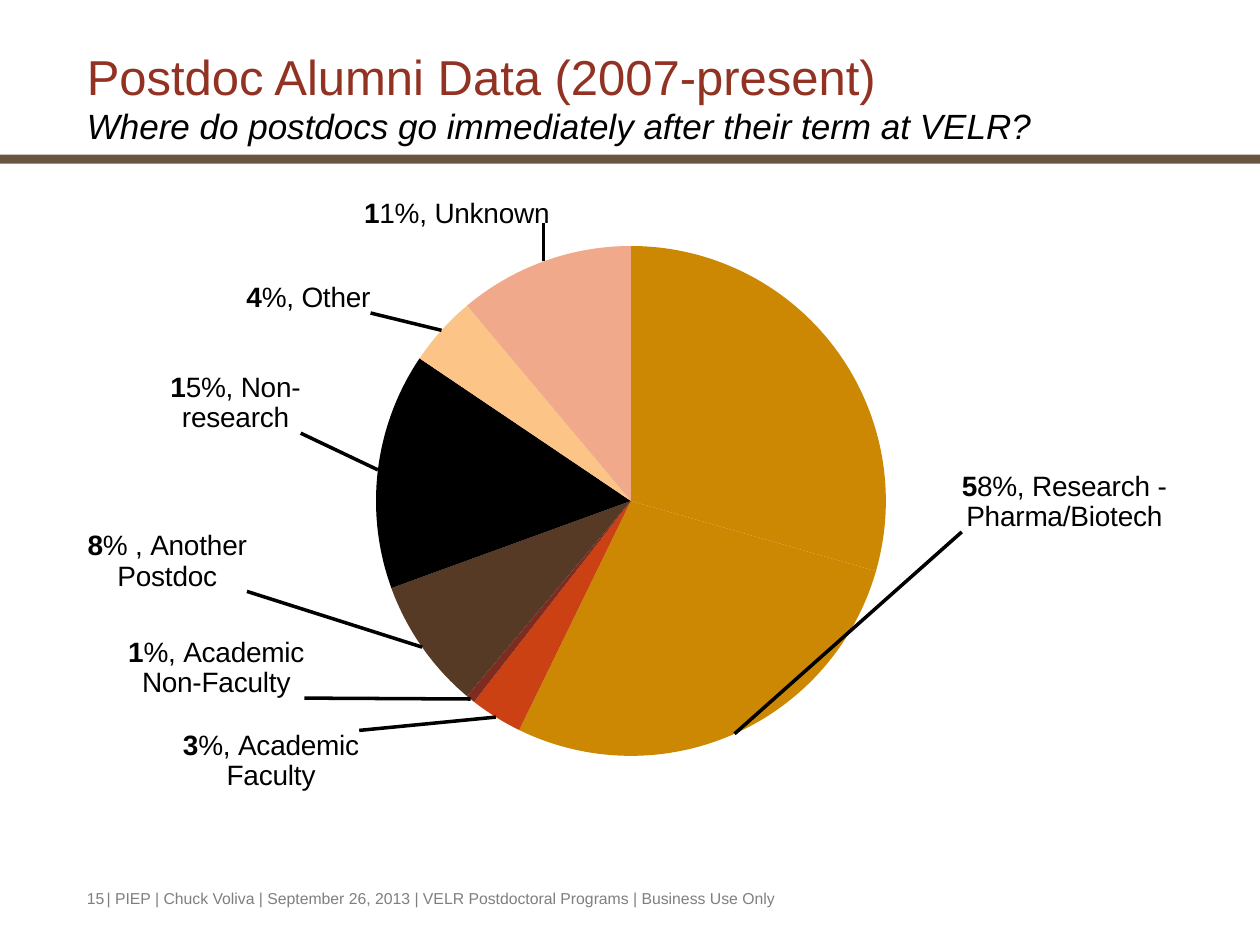
"""Build the postdoc alumni slide with a labelled pie chart."""
from math import cos, pi, sin

from lxml import etree
from pptx import Presentation
from pptx.chart.data import CategoryChartData
from pptx.dml.color import RGBColor
from pptx.enum import chart as charts, shapes, text
from pptx.oxml import parse_xml
from pptx.oxml.ns import nsdecls, qn
from pptx.util import Cm, Pt

FONT = "Arial"
TITLE = "Postdoc Alumni Data (2007-present)"
QUESTION = "Where do postdocs go immediately after their term at VELR?"
PAGE = "15"
FOOTER = "| PIEP | Chuck Voliva | September 26, 2013 | VELR Postdoctoral Programs | Business Use Only"
SLICES = [
    (53, "CC8803"), (50, "CC8803"), (6, "CB4113"), (1, "7F2C20"),
    (15, "563A25"), (27, "000000"), (8, "FCC587"), (20, "F0A98A"),
]
LABELS = [
    (1, "58%, Research - Pharma/Biotech", 19.33, 9.37),
    (2, "3%, Academic Faculty", 7.32, 14.6),
    (3, "1%, Academic Non-Faculty", 6.23, 12.74),
    (4, "8% , Another Postdoc", 5.1, 10.62),
    (5, "15%, Non-research", 6.21, 8.75),
    (6, "4%, Other", 7.58, 6.41),
    (7, "11%, Unknown", 11.13, 4.63),
]
CHART_LEFT, CHART_TOP, CHART_WIDTH, CHART_HEIGHT = 0.84, 4.01, 23.5, 12.7
CENTER_X, CENTER_Y, RADIUS = 12.72, 10.1, 5.14


def color(hex_code):
    return RGBColor.from_string(hex_code)


def style(run, size, hex_code, bold=False, italic=False):
    run.font.name, run.font.size = FONT, Pt(size)
    run.font.bold, run.font.italic = bold, italic
    run.font.color.rgb = color(hex_code)


def add_text(slide, left, top, width, height, content):
    frame = slide.shapes.add_textbox(Cm(left), Cm(top), Cm(width), Cm(height)).text_frame
    frame.word_wrap = True
    paragraph = frame.paragraphs[0]
    paragraph.text = content
    return frame, paragraph


def add_header(slide):
    bar = slide.shapes.add_shape(shapes.MSO_SHAPE.RECTANGLE, 0, Cm(3.12), Cm(25.4), Cm(0.18))
    bar.shadow.inherit = False
    bar.fill.solid()
    bar.fill.fore_color.rgb = color("6A5540")
    bar.line.fill.background()
    frame, heading = add_text(slide, 1.5, 1.69, 23.04, 1.4, f"{TITLE}\v{QUESTION}")
    frame.vertical_anchor = text.MSO_ANCHOR.BOTTOM
    heading.line_spacing = 0.95
    title, question = heading.runs
    style(title, 28, "923222")
    style(question, 20, "000000", italic=True)


def manual_layout(**settings):
    layout = etree.Element(qn("c:layout"))
    manual = etree.SubElement(layout, qn("c:manualLayout"))
    for tag, value in settings.items():
        etree.SubElement(manual, qn(f"c:{tag}")).set("val", str(value))
    return layout


def slice_edge(index):
    values = [value for value, _ in SLICES]
    angle = 2 * pi * (sum(values[:index]) + values[index] / 2) / sum(values)
    return CENTER_X + RADIUS * sin(angle), CENTER_Y - RADIUS * cos(angle)


def add_label(series, index, content, corner_x, corner_y):
    label = series.points[index].data_label
    paragraph = label.text_frame.paragraphs[0]
    for part, bold in [(content[0], True), (content[1:], False)]:
        run = paragraph.add_run()
        run.text = part
        style(run, 16, "000000", bold=bold)
    label.position = charts.XL_LABEL_POSITION.BEST_FIT
    edge_x, edge_y = slice_edge(index)
    element = paragraph._p.getparent().getparent().getparent()
    for old in element.findall(qn("c:layout")):
        element.remove(old)
    element.find(qn("c:idx")).addnext(manual_layout(
        x=(corner_x - edge_x) / CHART_WIDTH, y=(corner_y - edge_y) / CHART_HEIGHT))


def add_labels(series):
    labels = series.data_labels
    labels.show_value = True
    labels.font.size, labels.font.bold = Pt(16), True
    labels.font.color.rgb = color("000000")
    for label in LABELS:
        add_label(series, *label)
    element = labels._element
    element.insert(0, parse_xml(
        f'<c:dLbl {nsdecls("c")}><c:idx val="0"/><c:delete val="1"/></c:dLbl>'))
    for old in element.findall(qn("c:showLeaderLines")):
        element.remove(old)
    etree.SubElement(element, qn("c:showLeaderLines")).set("val", "1")
    element.append(parse_xml(
        f'<c:leaderLines {nsdecls("c", "a")}><c:spPr><a:ln w="25400"><a:solidFill>'
        '<a:srgbClr val="000000"/></a:solidFill></a:ln></c:spPr></c:leaderLines>'))


def add_pie(slide):
    data = CategoryChartData()
    data.categories = [str(number + 1) for number in range(len(SLICES))]
    data.add_series("Series 1", [value for value, _ in SLICES])
    pie = slide.shapes.add_chart(
        charts.XL_CHART_TYPE.PIE, Cm(CHART_LEFT), Cm(CHART_TOP),
        Cm(CHART_WIDTH), Cm(CHART_HEIGHT), data).chart
    pie.has_title = pie.has_legend = False
    pie.font.name, pie.font.size = FONT, Pt(10)
    pie.font.color.rgb = color("000000")
    plot = pie.plots[0]
    plot.vary_by_categories = True
    series = plot.series[0]
    for index, (_, hex_code) in enumerate(SLICES):
        wedge = series.points[index].format
        wedge.fill.solid()
        wedge.fill.fore_color.rgb = color(hex_code)
        wedge.line.fill.background()
    add_labels(series)
    area = plot._element.getparent()
    for old in area.findall(qn("c:layout")):
        area.remove(old)
    area.insert(0, manual_layout(
        layoutTarget="inner", xMode="edge", yMode="edge",
        x=(CENTER_X - RADIUS - CHART_LEFT) / CHART_WIDTH,
        y=(CENTER_Y - RADIUS - CHART_TOP) / CHART_HEIGHT,
        w=2 * RADIUS / CHART_WIDTH, h=2 * RADIUS / CHART_HEIGHT))


def add_footer(slide):
    for left, width, content in [(1.5, 1.12, PAGE), (1.9, 17.98, FOOTER)]:
        _, note = add_text(slide, left, 17.79, width, 0.69, content)
        style(note.runs[0], 9, "7F7F7F")


def main():
    deck = Presentation()
    deck.slide_width, deck.slide_height = Cm(25.4), Cm(19.05)
    slide = deck.slides.add_slide(deck.slide_layouts[6])
    add_header(slide)
    add_pie(slide)
    add_footer(slide)
    deck.save("out.pptx")


if __name__ == "__main__":
    main()
